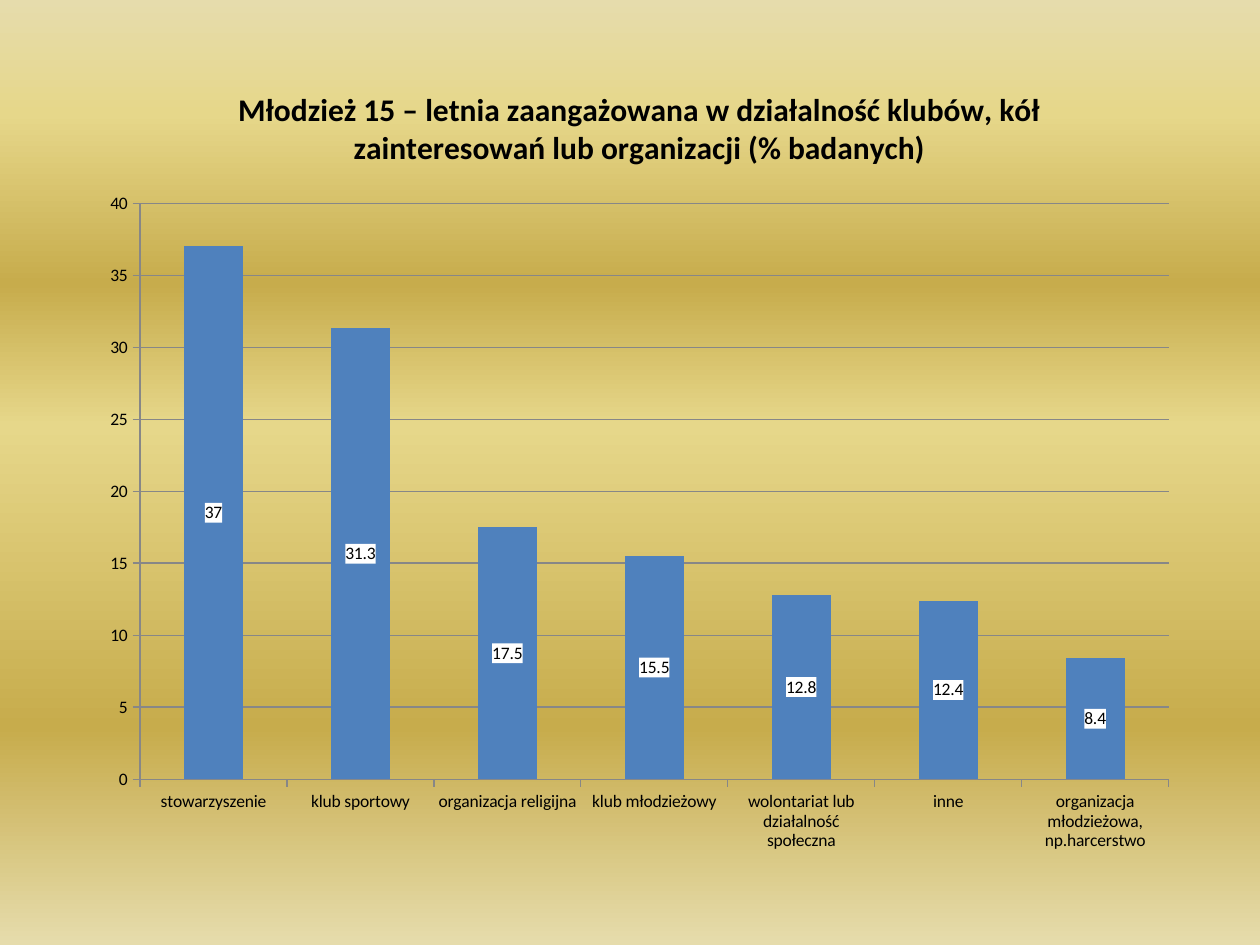
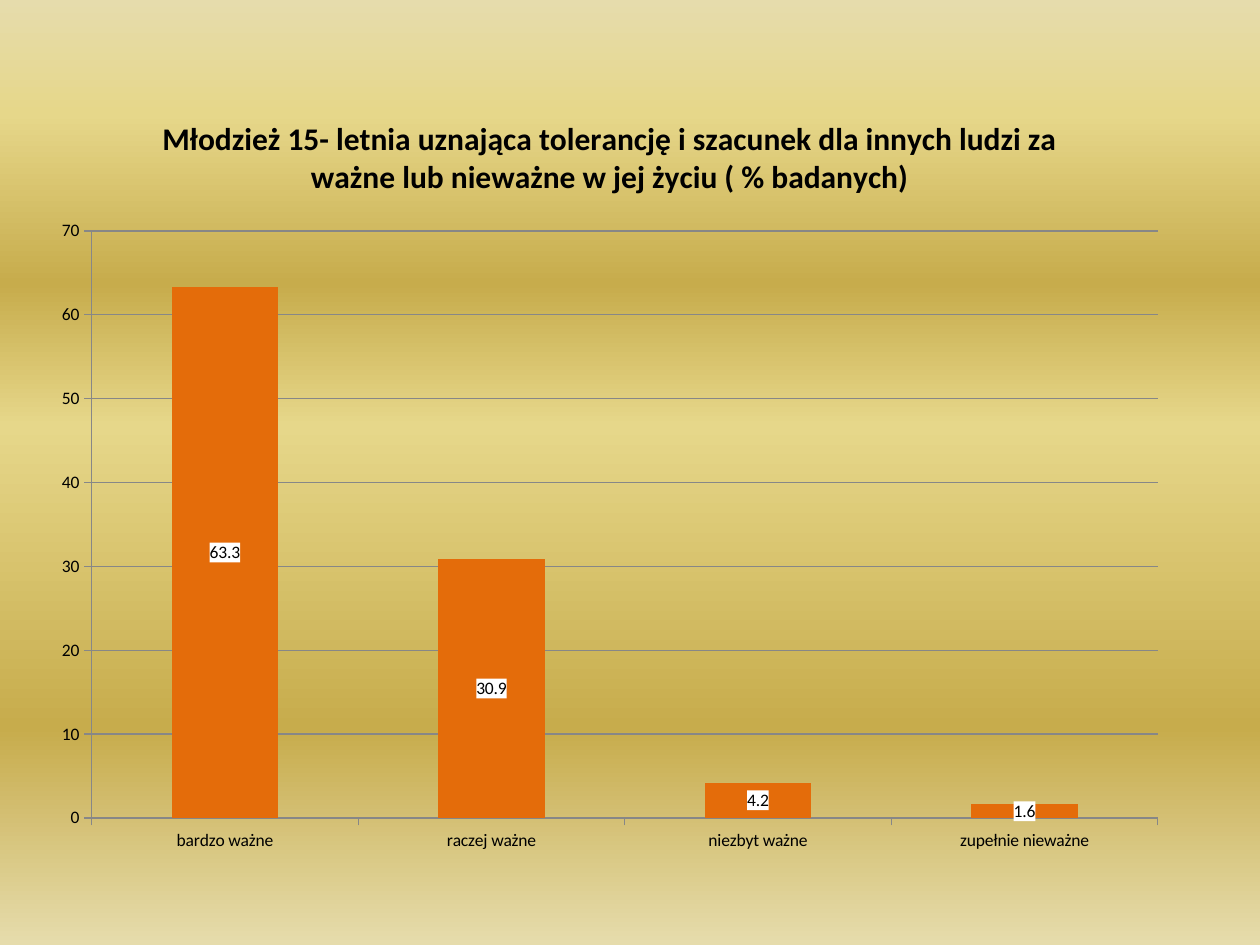
"""Build two slides with column charts on a shared golden gradient background."""
from lxml import etree
from pptx import Presentation
from pptx.chart import data as chart_data
from pptx.dml.color import RGBColor
from pptx.enum import chart as chart_enum
from pptx.oxml import ns
from pptx.util import Pt

FONT = "Calibri"
BLACK, WHITE, GRAY = "000000", "FFFFFF", "878787"
GOLD_STOPS = [(0, "E6DCAC"), (12, "E6D78A"), (30, "C7AC4C"),
              (45, "E6D78A"), (77, "C7AC4C"), (100, "E6DCAC")]
CHARTS = [
    {"title": "Młodzież 15 – letnia zaangażowana w działalność klubów, kół "
              "zainteresowań lub organizacji (% badanych)",
     "place": (50.4, 33.84, 630, 461.52), "color": "4F81BD", "maximum": 40, "step": 5,
     "values": {"stowarzyszenie": 37, "klub sportowy": 31.3, "organizacja religijna": 17.5,
                "klub młodzieżowy": 15.5, "wolontariat lub działalność społeczna": 12.8,
                "inne": 12.4, "organizacja młodzieżowa, np.harcerstwo": 8.4}},
    {"title": "Młodzież 15- letnia uznająca tolerancję i szacunek dla innych ludzi za "
              "ważne lub nieważne w jej życiu ( % badanych)",
     "place": (22.32, 50.4, 652.32, 444.24), "color": "E46C0A", "maximum": 70, "step": 10,
     "values": {"bardzo ważne": 63.3, "raczej ważne": 30.9, "niezbyt ważne": 4.2,
                "zupełnie nieważne": 1.6}},
]


def rgb(color):
    return RGBColor.from_string(color)


def style_font(font, size, bold=False):
    font.name, font.size, font.bold = FONT, Pt(size), bold
    font.color.rgb = rgb(BLACK)


presentation = Presentation()
presentation.slide_width, presentation.slide_height = Pt(720), Pt(540)

for settings in CHARTS:
    slide = presentation.slides.add_slide(presentation.slide_layouts[6])

    background = slide.background.fill
    background.gradient()
    background.gradient_angle = 270
    stop_list = next(slide.element.iter(ns.qn("a:gsLst")))
    for stop in list(stop_list):
        stop_list.remove(stop)
    for position, color in GOLD_STOPS:
        stop = etree.SubElement(stop_list, ns.qn("a:gs"), pos=str(position * 1000))
        etree.SubElement(stop, ns.qn("a:srgbClr"), val=color)

    columns = chart_data.CategoryChartData()
    columns.categories = list(settings["values"])
    columns.add_series("Series 1", list(settings["values"].values()))
    chart = slide.shapes.add_chart(
        chart_enum.XL_CHART_TYPE.COLUMN_STACKED,
        *[Pt(length) for length in settings["place"]], columns).chart
    style_font(chart.font, 10)
    chart.has_legend = False

    chart.has_title = True
    chart.chart_title.include_in_layout = False
    title = chart.chart_title.text_frame
    title.text = settings["title"]
    style_font(title.paragraphs[0].font, 18, bold=True)

    plot = chart.plots[0]
    plot.gap_width, plot.overlap, plot.vary_by_categories = 150, 100, False
    series = plot.series[0]
    series.format.fill.solid()
    series.format.fill.fore_color.rgb = rgb(settings["color"])

    labels = series.data_labels
    labels.show_value = True
    style_font(labels.font, 10)
    label_box = etree.Element(ns.qn("c:spPr"))
    label_fill = etree.SubElement(label_box, ns.qn("a:solidFill"))
    etree.SubElement(label_fill, ns.qn("a:srgbClr"), val=WHITE)
    next(series._element.iter(ns.qn("c:txPr"))).addprevious(label_box)

    value_axis = chart.value_axis
    value_axis.minimum_scale, value_axis.maximum_scale = 0, settings["maximum"]
    value_axis.major_unit = settings["step"]
    value_axis.has_major_gridlines = True
    for axis in (chart.category_axis, value_axis):
        axis.major_tick_mark = chart_enum.XL_TICK_MARK.OUTSIDE
        axis.minor_tick_mark = chart_enum.XL_TICK_MARK.NONE
    for lined in (chart.category_axis, value_axis, value_axis.major_gridlines):
        lined.format.line.color.rgb = rgb(GRAY)
        lined.format.line.width = Pt(0.75)

presentation.save("out.pptx")
